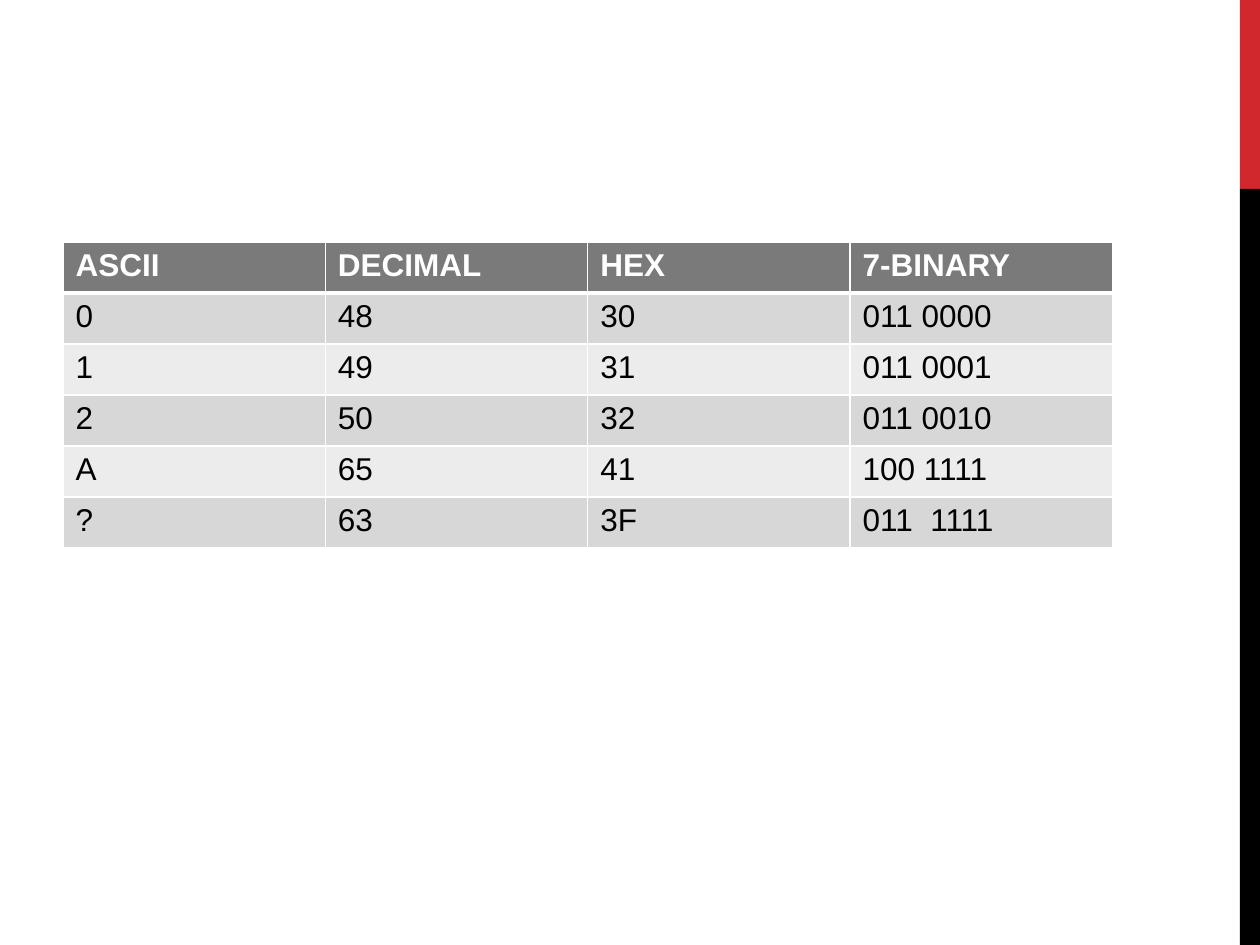
from dataclasses import dataclass

from lxml import etree
from pptx import Presentation
from pptx import util as u
from pptx.dml.color import RGBColor
from pptx.enum import shapes
from pptx.oxml.ns import qn

WHITE, BLACK, RED = "FFFFFF", "000000", "D1282E"
HEADER_FILL, BAND_FILLS = "7A7A7A", ("D7D7D7", "ECECEC")
THIN, THICK = 1, 3  # border widths in points

ROWS = [
    ("ASCII", "DECIMAL", "HEX", "7-BINARY"),
    ("0", "48", "30", "011 0000"),
    ("1", "49", "31", "011 0001"),
    ("2", "50", "32", "011 0010"),
    ("A", "65", "41", "100 1111"),
    ("?", "63", "3F", "011  1111"),
]


@dataclass
class Bar:
    top: float
    height: float
    color: str


@dataclass
class RowStyle:
    fill: str
    color: str
    bold: bool
    top: int
    bottom: int


def set_fill(fill, color: str) -> None:
    fill.solid()
    fill.fore_color.rgb = RGBColor.from_string(color)


def add_bar(slide, bar: Bar) -> None:
    sp = slide.shapes.add_shape(shapes.MSO_SHAPE.RECTANGLE, u.Inches(9.84),
                                u.Inches(bar.top), u.Inches(0.16), u.Inches(bar.height))
    sp.shadow.inherit = False
    sp.line.fill.background()
    set_fill(sp.fill, bar.color)


def add_border(cell, side: str, points: int) -> None:
    ln = etree.SubElement(cell._tc.get_or_add_tcPr(), qn(f"a:ln{side}"), w=str(u.Pt(points)))
    fill = etree.SubElement(ln, qn("a:solidFill"))
    etree.SubElement(fill, qn("a:srgbClr"), val=WHITE)


def row_style(index: int) -> RowStyle:
    if index == 0:
        return RowStyle(HEADER_FILL, WHITE, True, THIN, THICK)
    top = THICK if index == 1 else THIN
    return RowStyle(BAND_FILLS[(index - 1) % 2], BLACK, False, top, THIN)


def format_cell(cell, value: str, style: RowStyle) -> None:
    # Borders come before the fill in the cell properties
    for side, points in (("L", THIN), ("R", THIN), ("T", style.top), ("B", style.bottom)):
        add_border(cell, side, points)
    set_fill(cell.fill, style.fill)
    cell.text = value
    font = cell.text_frame.paragraphs[0].font
    font.name, font.size, font.bold = "Arial", u.Pt(18), style.bold
    font.color.rgb = RGBColor.from_string(style.color)


def add_code_table(slide) -> None:
    table = slide.shapes.add_table(len(ROWS), len(ROWS[0]), u.Inches(0.5), u.Inches(1.92),
                                   u.Inches(8.33), u.Inches(2.43)).table
    for i, values in enumerate(ROWS):
        for j, value in enumerate(values):
            format_cell(table.cell(i, j), value, row_style(i))


def main() -> None:
    prs = Presentation()
    prs.slide_width, prs.slide_height = u.Inches(10), u.Inches(7.5)
    slide = prs.slides.add_slide(prs.slide_layouts[6])
    set_fill(slide.background.fill, WHITE)

    # Right edge bars
    for bar in (Bar(0, 1.5, RED), Bar(1.5, 6, BLACK)):
        add_bar(slide, bar)

    # Character code table
    add_code_table(slide)
    prs.save("out.pptx")


if __name__ == "__main__":
    main()
